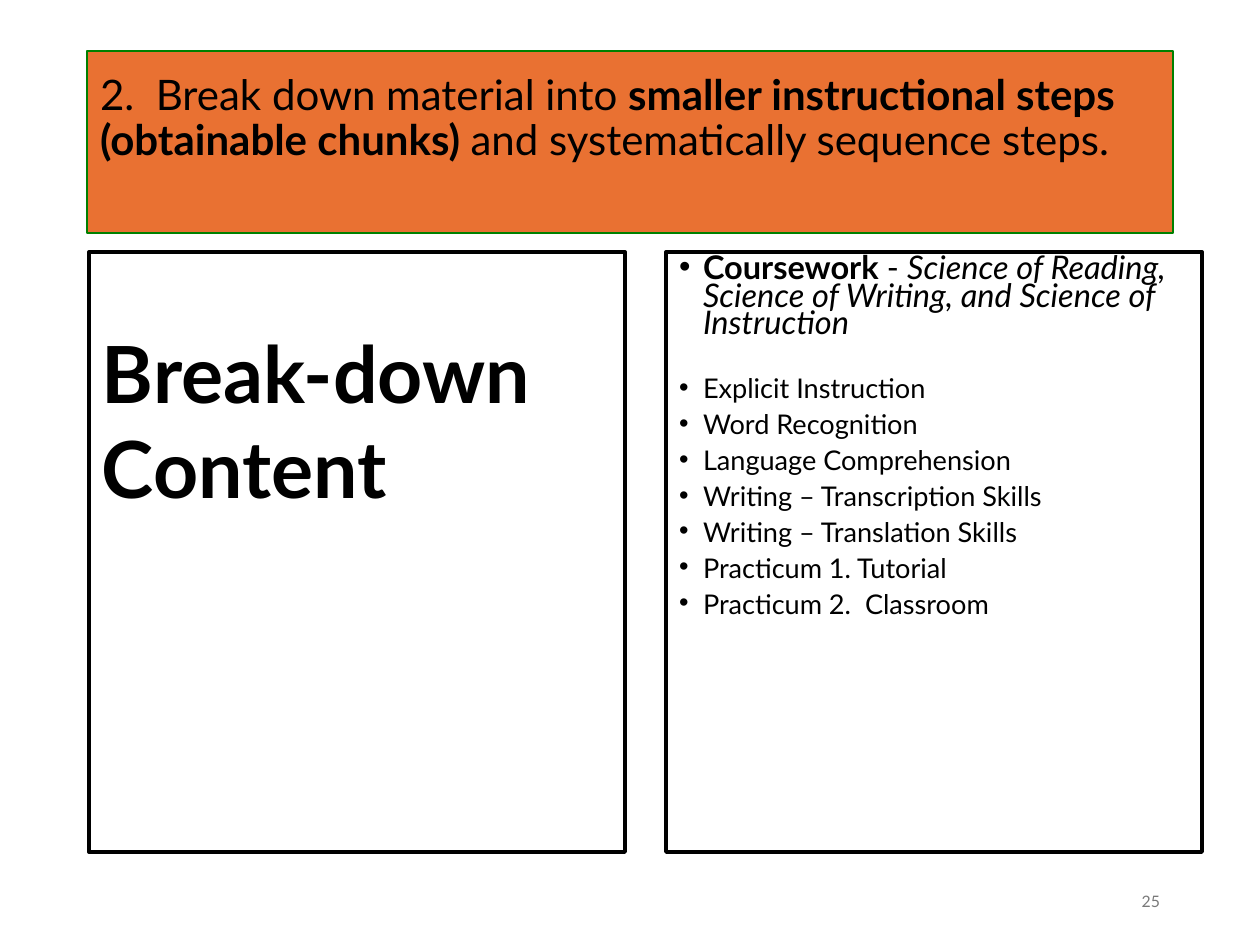
from pptx import Presentation
from pptx.dml.color import RGBColor as Rgb
from pptx.enum.shapes import MSO_SHAPE as Kind
from pptx.enum.text import MSO_ANCHOR as Anchor, MSO_AUTO_SIZE as Fit, PP_ALIGN as Align
from pptx.oxml.ns import qn
from pptx.util import Pt
from lxml.etree import SubElement

SCALE = 914400 / 126  # EMU in one px
COLORS = {"ink": "000000", "band": "E97132", "edge": "008000", "gray": "797979"}


def emu(px):
    return round(px * SCALE)


class Deck:
    font = "Lato"
    pad = 13, 6, 13, 6  # left, top, right, bottom

    def __init__(self, wide, high):
        self.prs = Presentation()
        self.prs.slide_width, self.prs.slide_height = emu(wide), emu(high)
        self.slide = self.prs.slides.add_slide(self.prs.slide_layouts[5])

    def color(self, name):
        return Rgb.from_string(COLORS[name])

    def place(self, shape, box):
        for name, px in zip(("left", "top", "width", "height"), box):
            setattr(shape, name, emu(px))

    def line(self, shape, name, width):
        shape.line.color.rgb = self.color(name)
        shape.line.width = Pt(width)

    def frame(self, shape, anchor, pad=pad):
        frame = shape.text_frame
        frame.word_wrap, frame.auto_size = True, Fit.NONE
        frame.vertical_anchor = anchor
        for side, px in zip(("left", "top", "right", "bottom"), pad):
            setattr(frame, "margin_" + side, emu(px))
        return frame

    def text(self, para, runs, size, ink="ink", **form):
        """Fill a paragraph; each run is its text and its font values."""
        for name, value in ({"alignment": Align.LEFT} | form).items():
            setattr(para, name, value)
        for words, style in runs:
            run = para.add_run()
            run.text = words
            run.font.color.rgb = self.color(ink)
            look = {"name": self.font, "size": Pt(size), "bold": False}
            for name, value in (look | style).items():
                setattr(run.font, name, value)

    def bullet(self, para, indent):
        props = para._p.get_or_add_pPr()
        props.set("marL", str(emu(indent)))
        props.set("indent", str(-emu(indent)))
        SubElement(props, qn("a:buFont"), typeface="Arial")
        SubElement(props, qn("a:buChar"), char="•")

    def title(self, box, runs, size, pad):
        shape = self.slide.shapes.title
        self.place(shape, box)
        shape.fill.solid()
        shape.fill.fore_color.rgb = self.color("band")
        self.line(shape, "edge", 0.75)
        frame = self.frame(shape, Anchor.MIDDLE, pad)
        self.text(frame.paragraphs[0], runs, size, line_spacing=0.9)

    def panel(self, box, pad=pad):
        shape = self.slide.shapes.add_shape(Kind.RECTANGLE, *map(emu, box))
        shape.shadow.inherit = False
        shape.fill.background()
        self.line(shape, "ink", 2.25)
        return self.frame(shape, Anchor.TOP, pad)

    def bullets(self, frame, items):
        """Each item is its runs, text size and space after."""
        for i, (runs, size, after) in enumerate(items):
            para = frame.add_paragraph() if i else frame.paragraphs[0]
            self.text(para, runs, size, line_spacing=0.7,
                      space_before=Pt(7.5), space_after=Pt(after))
            self.bullet(para, 24)

    def label(self, box, words, size, ink):
        shape = self.slide.shapes.add_textbox(*map(emu, box))
        frame = self.frame(shape, Anchor.MIDDLE)
        self.text(frame.paragraphs[0], [(words, {})], size, ink, alignment=Align.RIGHT)


def main():
    deck = Deck(1260, 945)
    bold, slant = {"bold": True}, {"italic": True}

    # Title band
    deck.title((87, 51, 1086, 182), [
        ("2.  Break down material into ", {}),
        ("smaller instructional steps (obtainable chunks) ", bold),
        ("and systematically sequence steps.", {}),
    ], 24, (13, 6, 13, 51))

    # Two equal panels
    left, right = [(x, 252, 536, 600) for x in (89, 666)]
    frame = deck.panel(left, (13, 73, 13, 6))
    deck.text(frame.paragraphs[0], [("Break-down Content", bold)], 45)

    lead = [("Coursework ", bold), ("- ", {}),
            ("Science of Reading, Science of Writing, and Science of Instruction", slant)]
    topics = ["Explicit Instruction", "Word Recognition", "Language Comprehension",
              "Writing – Transcription Skills", "Writing – Translation Skills",
              "Practicum 1. Tutorial", "Practicum 2.  Classroom"]
    deck.bullets(deck.panel(right),
                 [(lead, 18.6, 15.6)] + [([(t, {})], 15.5, 0) for t in topics])

    # Page number
    deck.label((890, 876, 283, 50), "25", 9, "gray")
    deck.prs.save("out.pptx")


if __name__ == "__main__":
    main()
